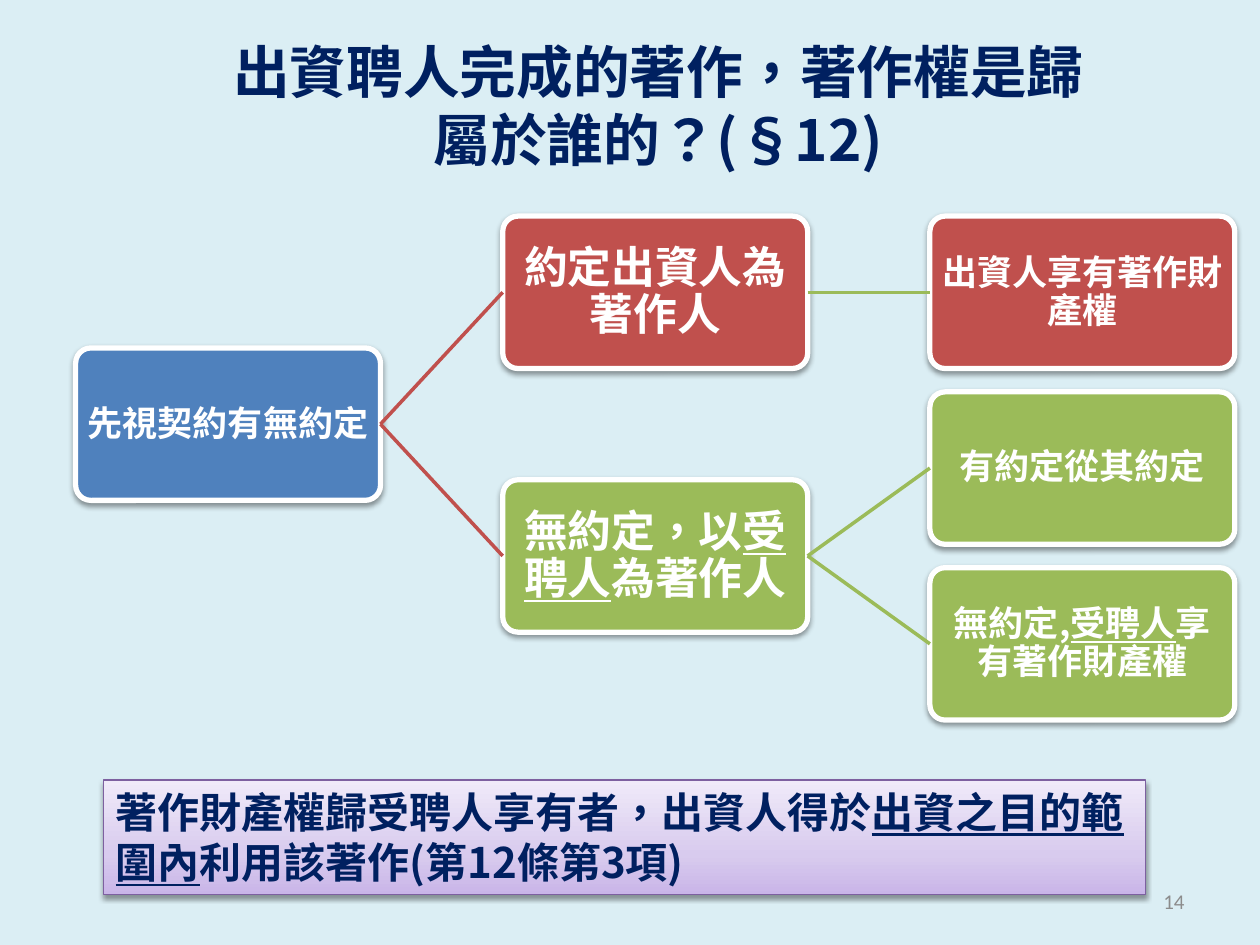
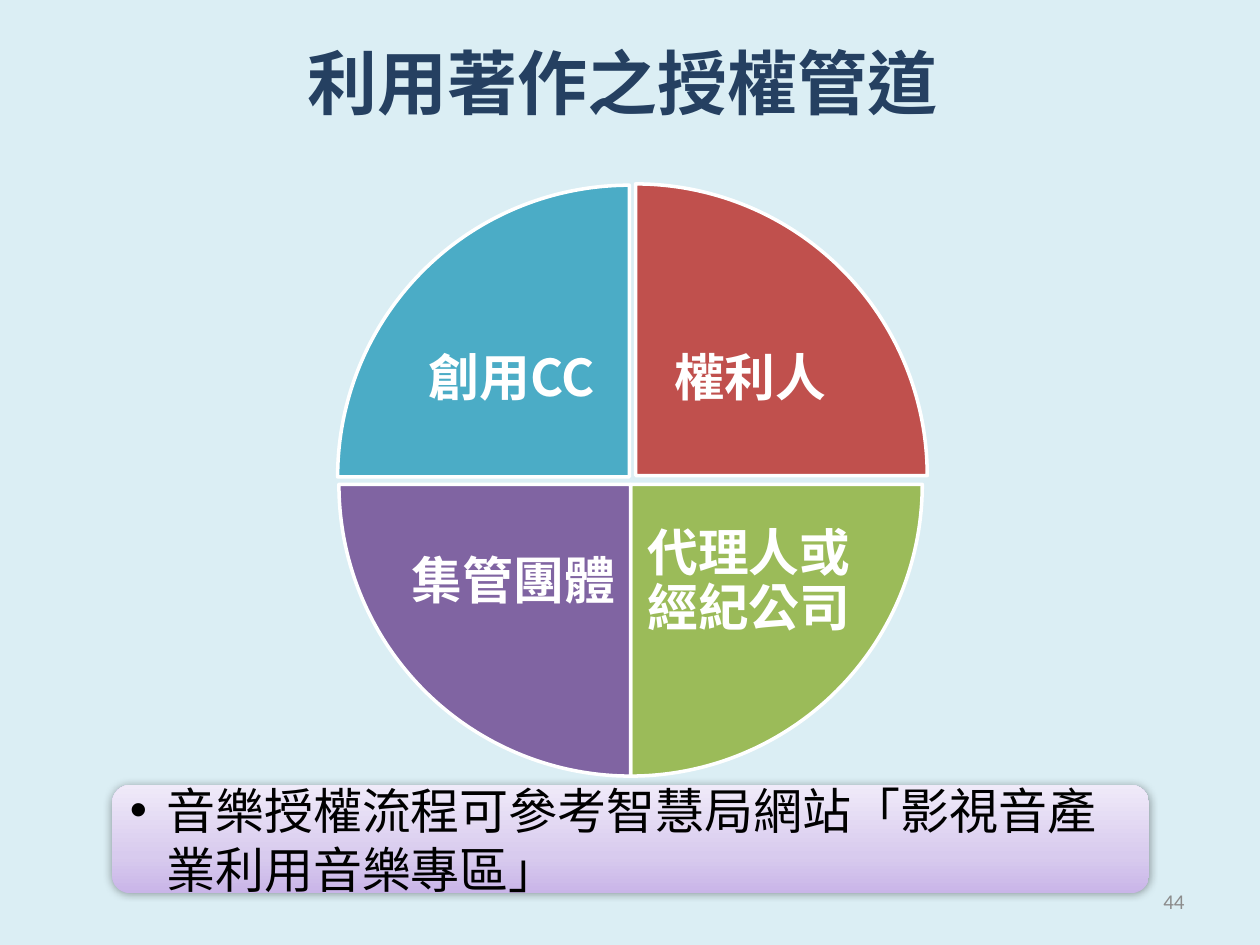
from lxml import etree
from pptx import Presentation, util as u
from pptx.dml.color import RGBColor
from pptx.enum import shapes, text
from pptx.oxml import ns

# Content: words between underscores are underlined
TREE = {"head": "出資聘人完成的著作，著作權是歸屬於誰的？(§12)", "page": "14",
        "note": "著作財產權歸受聘人享有者，出資人得於_出資之目的範圍內_利用該著作(第12條第3項)"}
PIE = {"head": "利用著作之授權管道", "page": "44",
       "note": "音樂授權流程可參考智慧局網站「影視音產業利用音樂專區」"}

# Colours
SKY = RGBColor(0xDB, 0xEE, 0xF4)
NAVY = RGBColor(0x00, 0x20, 0x60)
SLATE = RGBColor(0x25, 0x40, 0x61)
GREY = RGBColor(0x8C, 0x8C, 0x8C)
BLACK = RGBColor(0, 0, 0)
WHITE = RGBColor(255, 255, 255)
BLUE = RGBColor(0x4F, 0x81, 0xBD)
RED = RGBColor(0xC0, 0x50, 0x4D)
GREEN = RGBColor(0x9B, 0xBB, 0x59)
PURPLE = RGBColor(0x80, 0x64, 0xA2)
TEAL = RGBColor(0x4B, 0xAC, 0xC6)
EDGE = RGBColor(0x7D, 0x60, 0xA0)
LILAC = [(0, "C9B5E8"), (35, "D8CBEE"), (100, "F0EAF9")]

# Node: text, size, fill, colour of the lines to its children, children
ROOT = ("先視契約有無約定", 20, BLUE, RED, [
    ("約定出資人為著作人", 25, RED, GREEN, [
        ("出資人享有著作財產權", 20, RED, None, [])]),
    ("無約定，以_受聘人_為著作人", 25, GREEN, GREEN, [
        ("有約定從其約定", 20, GREEN, None, []),
        ("無約定,_受聘人_享有著作財產權", 20, GREEN, None, [])])])

# Quarter: text, fill, start angle, circle left and top, label left and top
QUARTERS = [("權利人", RED, 270, 2.73, 1.46, 5.1, 2.32),
            ("代理人或經紀公司", GREEN, 0, 2.69, 1.53, 5.09, 3.93),
            ("集管團體", PURPLE, 90, 2.69, 1.53, 3.22, 3.93),
            ("創用CC", TEAL, 180, 2.68, 1.47, 3.21, 2.32)]

# Layout
CJK, LATIN = "Noto Sans CJK SC", "Calibri"
PITCH = 1.2                                   # line height per point of type
BOX_W, BOX_H, COL_X, COL_GAP = 2.42, 1.21, 0.6, 3.39
LEAF_Y, LEAF_GAP = 2.32, 1.395
DISC = 4.63
KIND, ALIGN, ANCHOR = shapes.MSO_SHAPE, text.PP_ALIGN, text.MSO_ANCHOR


def inch(*vals):
    return [u.Inches(v) for v in vals]


def write(shape, words, size, color, bold=True, align=ALIGN.CENTER,
          anchor=ANCHOR.MIDDLE, pad=None, tight=1.0, font=CJK):
    frame = shape.text_frame
    frame.word_wrap = True
    frame.vertical_anchor = anchor
    if pad is not None:
        frame.margin_left = frame.margin_right = u.Inches(pad)
        frame.margin_top = frame.margin_bottom = u.Inches(pad)
    para = frame.paragraphs[0]
    para.alignment = align
    para.line_spacing = u.Pt(round(size * PITCH * tight, 1))
    for i, part in enumerate(words.split("_")):
        run = para.add_run()
        run.text = part
        face = run.font
        face.size, face.bold, face.name = u.Pt(size), bold, font
        face.color.rgb = color
        if i % 2:
            face.underline = True
        props = run._r.get_or_add_rPr()
        props.set("lang", "zh-TW")
        etree.SubElement(props, ns.qn("a:ea")).set("typeface", font)
    return para


def label(slide, place, words, size, color, **style):
    return write(slide.shapes.add_textbox(*inch(*place)), words, size, color, **style)


def block(slide, kind, place, fill=None, line=None, width=1):
    shape = slide.shapes.add_shape(kind, *inch(*place))
    shape.shadow.inherit = False
    if fill is not None:
        shape.fill.solid()
        shape.fill.fore_color.rgb = fill
    if line is None:
        shape.line.fill.background()
    else:
        shape.line.color.rgb = line
        shape.line.width = u.Pt(width)
    return shape


def shade(shape, alpha, blur, dist, angle):
    glow = shape._element.spPr.find(ns.qn("a:effectLst"))
    drop = etree.SubElement(glow, ns.qn("a:outerShdw"), blurRad=str(u.Pt(blur)),
                            dist=str(u.Pt(dist)), dir=str(angle * 60000), rotWithShape="0")
    tone = etree.SubElement(drop, ns.qn("a:srgbClr"), val="000000")
    etree.SubElement(tone, ns.qn("a:alpha"), val=str(alpha * 1000))


def blend(shape):
    shape.fill.gradient()
    grad = shape._element.spPr.find(ns.qn("a:gradFill"))
    for child in list(grad):
        grad.remove(child)
    stops = etree.SubElement(grad, ns.qn("a:gsLst"))
    for pos, tone in LILAC:
        stop = etree.SubElement(stops, ns.qn("a:gs"), pos=str(pos * 1000))
        etree.SubElement(stop, ns.qn("a:srgbClr"), val=tone)
    etree.SubElement(grad, ns.qn("a:lin"), ang=str(270 * 60000), scaled="1")


def bullet(para, indent):
    props = para._p.get_or_add_pPr()
    props.set("marL", str(u.Inches(indent)))
    props.set("indent", str(-u.Inches(indent)))
    etree.SubElement(props, ns.qn("a:buFont"), typeface="Arial")
    etree.SubElement(props, ns.qn("a:buChar"), char="•")


def start(deck, data, place, size, color):
    """Add a slide with background, title and page number."""
    slide = deck.slides.add_slide(deck.slide_layouts[6])
    slide.background.fill.solid()
    slide.background.fill.fore_color.rgb = SKY
    label(slide, place, data["head"], size, color)
    label(slide, (7.17, 6.95, 2.33, 0.4), data["page"], 12, GREY,
          bold=False, align=ALIGN.RIGHT, font=LATIN)
    return slide


def link(slide, parent, child, color):
    line = slide.shapes.add_connector(shapes.MSO_CONNECTOR.STRAIGHT, 0, 0, 0, 0)
    line.begin_connect(parent, 3)
    line.end_connect(child, 1)
    line.line.color.rgb = color
    line.line.width = u.Pt(2)
    etree.SubElement(line._element.spPr, ns.qn("a:effectLst"))


def grow(slide, node, rows, depth=0):
    """Draw a node midway between its children; return box and centre."""
    words, size, fill, tone, kids = node
    drawn = [grow(slide, kid, rows, depth + 1) for kid in kids]
    if drawn:
        mid = sum(y for _, y in drawn) / len(drawn)
    else:
        mid = LEAF_Y + LEAF_GAP * next(rows)
    place = (COL_X + COL_GAP * depth, mid - BOX_H / 2, BOX_W, BOX_H)
    box = block(slide, KIND.ROUNDED_RECTANGLE, place, fill, WHITE, 3)
    box.adjustments[0] = 0.1
    shade(box, 38, 3.1, 1.6, 90)
    write(box, words, size, WHITE, pad=0.04, tight=0.9)
    for kid, _ in drawn:
        link(slide, box, kid, tone)
    return box, mid


def tree(deck):
    slide = start(deck, TREE, (1.54, 0.21, 7.37, 1.25), 32.4, NAVY)
    grow(slide, ROOT, iter(range(3)))
    note = block(slide, KIND.RECTANGLE, (0.82, 6.19, 8.27, 0.91), line=EDGE, width=0.75)
    blend(note)
    shade(note, 38, 3.1, 1.6, 90)
    write(note, TREE["note"], 24, NAVY, align=ALIGN.LEFT, anchor=ANCHOR.TOP)


def pie(deck):
    slide = start(deck, PIE, (0.44, 0.13, 9, 1.04), 40, SLATE)
    note = block(slide, KIND.ROUNDED_RECTANGLE, (0.89, 6.23, 8.23, 0.86))
    blend(note)
    shade(note, 40, 5, 0, 0)
    bullet(write(note, PIE["note"], 28, BLACK, bold=False, align=ALIGN.LEFT), 0.29)
    for words, fill, angle, x, y, left, top in QUARTERS:
        part = block(slide, KIND.PIE, (x, y, DISC, DISC), fill, WHITE, 2)
        part.adjustments[0] = angle * 0.6
        part.adjustments[1] = (angle + 90) % 360 * 0.6
        label(slide, (left, top, 1.71, 1.38), words, 29, WHITE, pad=0.04, tight=0.9)


def main():
    deck = Presentation()
    deck.slide_width, deck.slide_height = inch(10, 7.5)
    tree(deck)
    pie(deck)
    deck.save("out.pptx")


if __name__ == "__main__":
    main()
